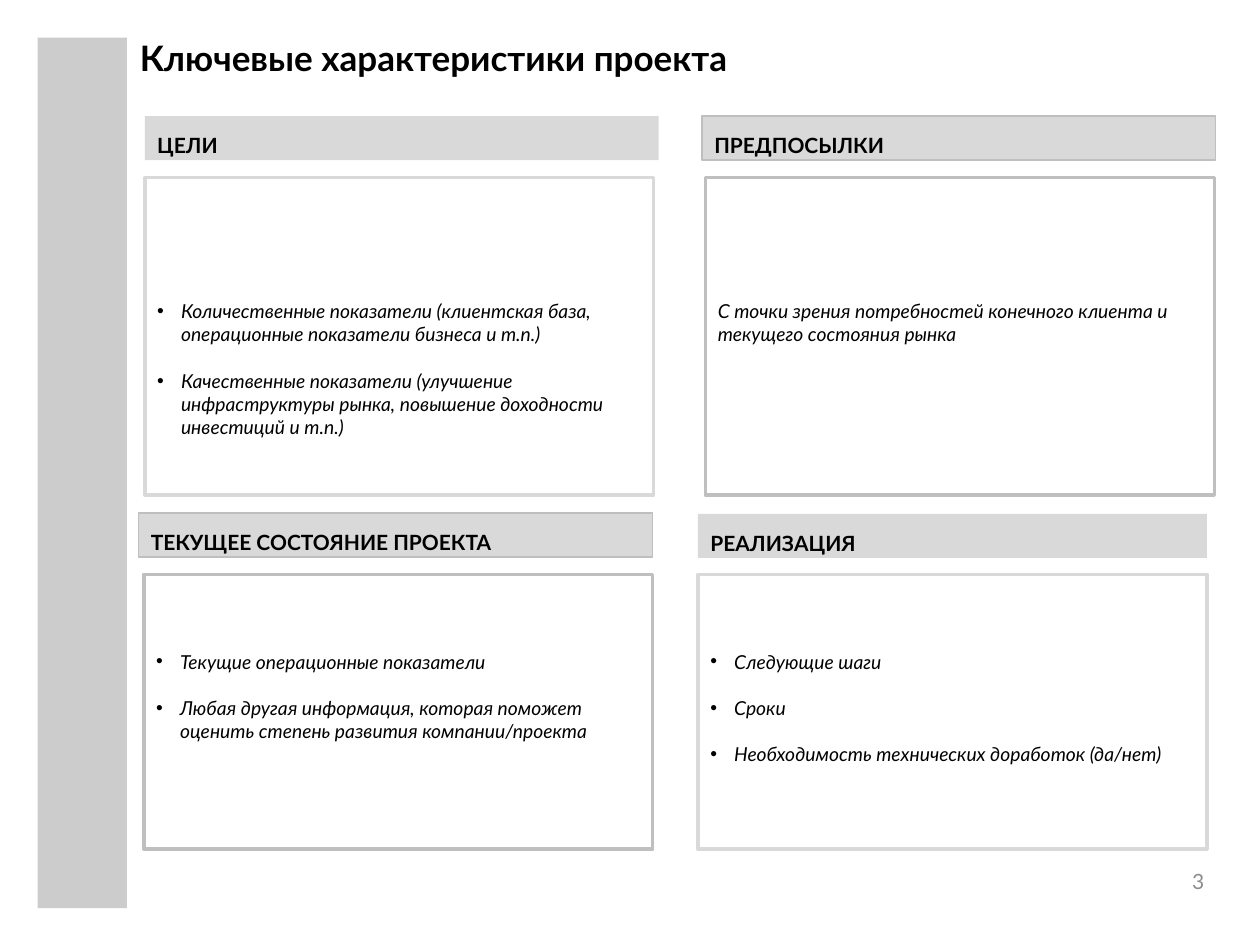
from lxml import etree
from pptx import Presentation
from pptx.dml.color import RGBColor
from pptx.enum.shapes import MSO_SHAPE
from pptx.enum.text import MSO_ANCHOR, PP_ALIGN
from pptx.oxml.ns import qn
from pptx.util import Cm, Pt

RECT = MSO_SHAPE.RECTANGLE
TOP, MIDDLE = MSO_ANCHOR.TOP, MSO_ANCHOR.MIDDLE
LEFT, RIGHT = PP_ALIGN.LEFT, PP_ALIGN.RIGHT

TITLE = {"size": Pt(20), "bold": True}
HEADING = {"size": Pt(12), "bold": True}
BODY = {"size": Pt(11), "italic": True}
NUMBER = {"size": Pt(12)}
PALE, GREY = "D9D9D9", "BFBFBF"
ROW_TOP, ROW_HEIGHT = (3.58, 11.58), (6.4, 5.54)
ROW_INSET = (2.46, 1.52)  # space above the first line of a panel


def add_box(x, y, w, h, fill=None, line=None, weight=0.75):
    sp = s.shapes.add_shape(RECT, Cm(x), Cm(y), Cm(w), Cm(h))
    sp.shadow.inherit = False
    if fill:
        sp.fill.solid()
        sp.fill.fore_color.rgb = RGBColor.from_string(fill)
    else:
        sp.fill.background()
    if line:
        sp.line.color.rgb = RGBColor.from_string(line)
        sp.line.width = Pt(weight)
    else:
        sp.line.fill.background()
    return sp


def write(sp, lines, fmt, color="000000", align=LEFT, anchor=TOP,
          spacing=None, gap=0, bullet=False):
    tf = sp.text_frame
    tf.word_wrap = True
    tf.vertical_anchor = anchor
    for i, line in enumerate(lines):
        p = tf.add_paragraph() if i else tf.paragraphs[0]
        p.alignment = align
        p.line_spacing = spacing
        if i:
            p.space_before = Pt(gap)
        if bullet:
            pPr = p._p.get_or_add_pPr()
            pPr.set("marL", str(Cm(0.48)))
            pPr.set("indent", str(-Cm(0.48)))
            etree.SubElement(pPr, qn("a:buFont")).set("typeface", "Arial")
            etree.SubElement(pPr, qn("a:buChar")).set("char", "•")
        r = p.add_run()
        r.text = line
        r.font.name = "Lato"
        r.font.color.rgb = RGBColor.from_string(color)
        for name, value in fmt.items():
            setattr(r.font, name, value)


prs = Presentation()
prs.slide_width, prs.slide_height = Cm(25.4), Cm(19.05)
s = prs.slides.add_slide(prs.slide_layouts[6])

# Side bar
add_box(0.76, 0.76, 1.8, 17.55, fill="CCCCCC")

# Title
title = s.shapes.add_textbox(Cm(2.57), Cm(0.61), Cm(23.39), Cm(1.73))
write(title, ["Ключевые характеристики проекта"], TITLE)

# Panels: row, heading (left, top, width, line), frame (left, line), text, bullets
panels = [
    (0, "ЦЕЛИ", (2.92, 2.34, 10.36, None), (2.92, PALE),
     ["Количественные показатели (клиентская база, операционные показатели "
      "бизнеса и т.п.)",
      "Качественные показатели (улучшение инфраструктуры рынка, повышение "
      "доходности инвестиций и т.п.)"], True),
    (0, "ПРЕДПОСЫЛКИ", (14.15, 2.34, 10.36, GREY), (14.22, GREY),
     ["С точки зрения потребностей конечного клиента и текущего состояния "
      "рынка"], False),
    (1, "ТЕКУЩЕЕ СОСТОЯНИЕ ПРОЕКТА", (2.79, 10.34, 10.36, GREY), (2.9, GREY),
     ["Текущие операционные показатели",
      "Любая другая информация, которая поможет оценить степень развития "
      "компании/проекта"], True),
    (1, "РЕАЛИЗАЦИЯ", (14.07, 10.36, 10.26, None), (14.07, PALE),
     ["Следующие шаги", "Сроки",
      "Необходимость технических доработок (да/нет)"], True),
]
for row, heading, (x, y, w, edge), (left, border), lines, bullet in panels:
    head = add_box(x, y, w, 0.89, fill=PALE, line=edge)
    write(head, [heading], HEADING, spacing=1.4)
    frame = add_box(left, ROW_TOP[row], 10.26, ROW_HEIGHT[row],
                    line=border, weight=2)
    frame.text_frame.margin_top = Cm(ROW_INSET[row])
    write(frame, lines, BODY, gap=13.2, bullet=bullet)

# Slide number
number = s.shapes.add_textbox(Cm(23.29), Cm(17.2), Cm(0.99), Cm(0.99))
number.text_frame.margin_right = number.text_frame.margin_bottom = 0
write(number, ["3"], NUMBER, color="8C8C8C", align=RIGHT, anchor=MIDDLE)

prs.save("out.pptx")
